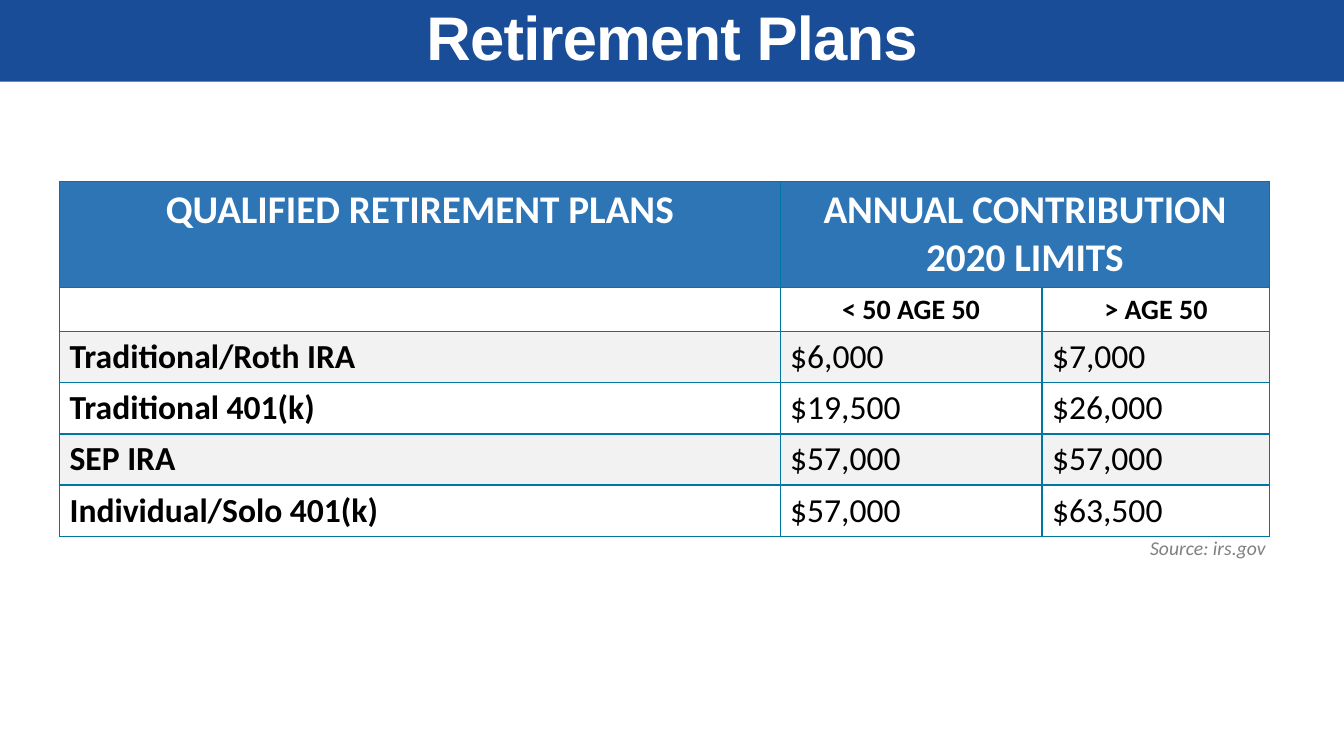
from lxml.etree import SubElement
from pptx import Presentation
from pptx.dml.color import RGBColor
from pptx.enum.shapes import MSO_SHAPE
from pptx.enum.text import MSO_ANCHOR, MSO_AUTO_SIZE, PP_ALIGN
from pptx.oxml.ns import qn
from pptx.util import Cm, Pt

NAVY = RGBColor(0x1A, 0x4D, 0x98)
BLUE = RGBColor(0x2E, 0x75, 0xB6)
TEAL = RGBColor(0x00, 0x76, 0xA3)
WHITE = RGBColor(0xFF, 0xFF, 0xFF)
BLACK = RGBColor(0x00, 0x00, 0x00)
PALE = RGBColor(0xF2, 0xF2, 0xF2)
GRAY = RGBColor(0x80, 0x80, 0x80)


def style(frame, text, size, color, align, bold=False, face="Calibri"):
    frame.text = text
    line = frame.paragraphs[0]
    line.alignment = align
    for run in line.runs:
        run.font.name = face
        run.font.size = Pt(size)
        run.font.bold = bold
        run.font.color.rgb = color
    return line


def border(cell):
    props = cell._tc.get_or_add_tcPr()
    for side in ("a:lnL", "a:lnR", "a:lnT", "a:lnB"):
        edge = SubElement(props, qn(side), w=str(Pt(1)))
        fill = SubElement(edge, qn("a:solidFill"))
        SubElement(fill, qn("a:srgbClr"), val=str(TEAL))


deck = Presentation()
deck.slide_width, deck.slide_height = Cm(33.87), Cm(19.05)
slide = deck.slides.add_slide(deck.slide_layouts[6])

# Title band
band = slide.shapes.add_shape(MSO_SHAPE.RECTANGLE, 0, 0, deck.slide_width, Cm(2.06))
band.shadow.inherit = False
band.fill.solid()
band.fill.fore_color.rgb = NAVY
band.line.fill.background()
band.text_frame.vertical_anchor = MSO_ANCHOR.MIDDLE
title = style(band.text_frame, "Retirement Plans", 44, WHITE,
              PP_ALIGN.CENTER, True, "Arial")
title.line_spacing = 0.9
title.runs[0].font._element.set("spc", "-60")

# Table of limits
rows = [
    ("QUALIFIED RETIREMENT PLANS", "ANNUAL CONTRIBUTION 2020 LIMITS", ""),
    ("", "< 50 AGE 50", "> AGE 50"),
    ("Traditional/Roth IRA", "$6,000", "$7,000"),
    ("Traditional 401(k)", "$19,500", "$26,000"),
    ("SEP IRA", "$57,000", "$57,000"),
    ("Individual/Solo 401(k)", "$57,000", "$63,500"),
]
widths = [18.16, 6.6, 5.74]
heights = [2.62, 1.12] + [1.27] * 4
table = slide.shapes.add_table(len(rows), len(widths), Cm(1.5), Cm(4.57),
                               Cm(sum(widths)), Cm(sum(heights))).table
for col, width in zip(table.columns, widths):
    col.width = Cm(width)
for row, height in zip(table.rows, heights):
    row.height = Cm(height)
table.cell(0, 1).merge(table.cell(0, 2))

for r, texts in enumerate(rows):
    size = {0: 28, 1: 20}.get(r, 24)
    color = WHITE if r == 0 else BLACK
    align = PP_ALIGN.CENTER if r < 2 else PP_ALIGN.LEFT
    shade = BLUE if r == 0 else WHITE if r % 2 else PALE
    for c, text in enumerate(texts):
        cell = table.cell(r, c)
        border(cell)
        cell.fill.solid()
        cell.fill.fore_color.rgb = shade
        if text:
            style(cell.text_frame, text, size, color, align, r < 2 or c == 0)

# Source note
note = slide.shapes.add_textbox(Cm(28.7), Cm(13.39), Cm(3.45), Cm(0.86)).text_frame
note.word_wrap = False
note.auto_size = MSO_AUTO_SIZE.SHAPE_TO_FIT_TEXT
credit = style(note, "Source: irs.gov", 14, GRAY, PP_ALIGN.RIGHT)
credit.runs[0].font.italic = True

deck.save("out.pptx")
